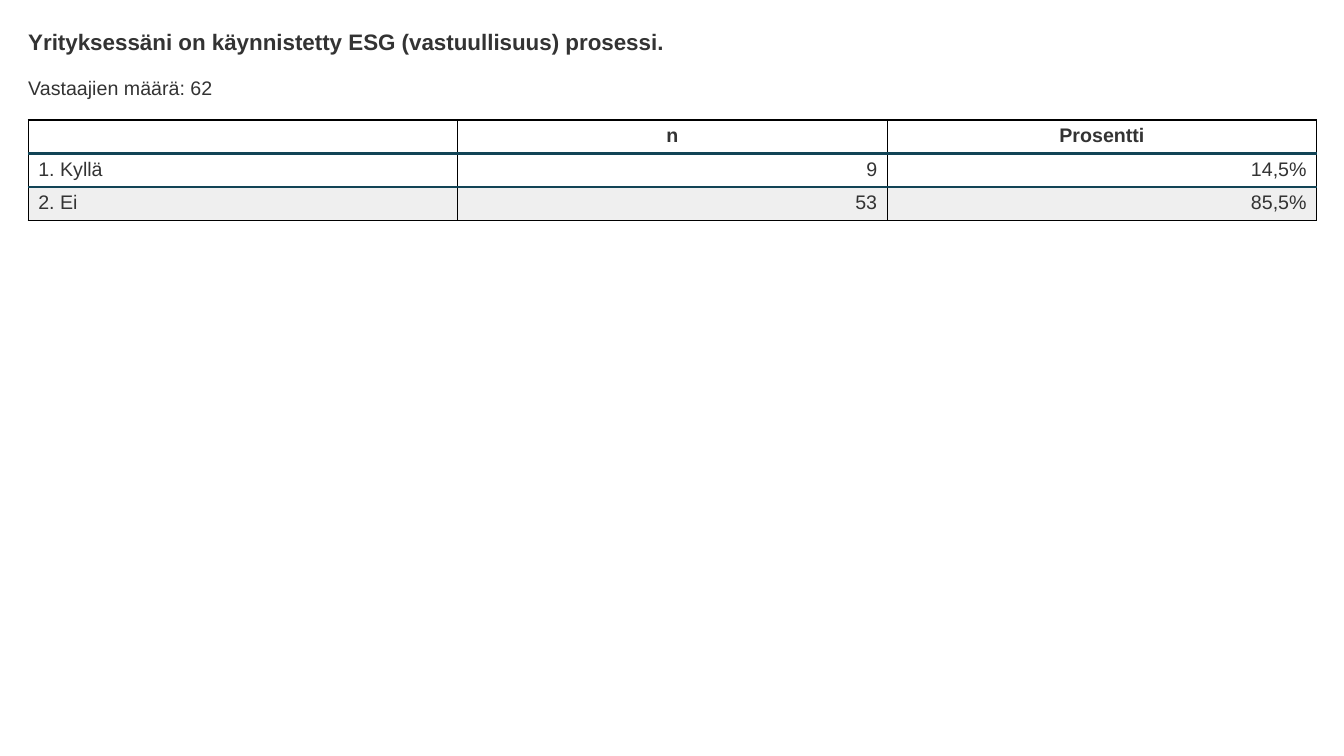
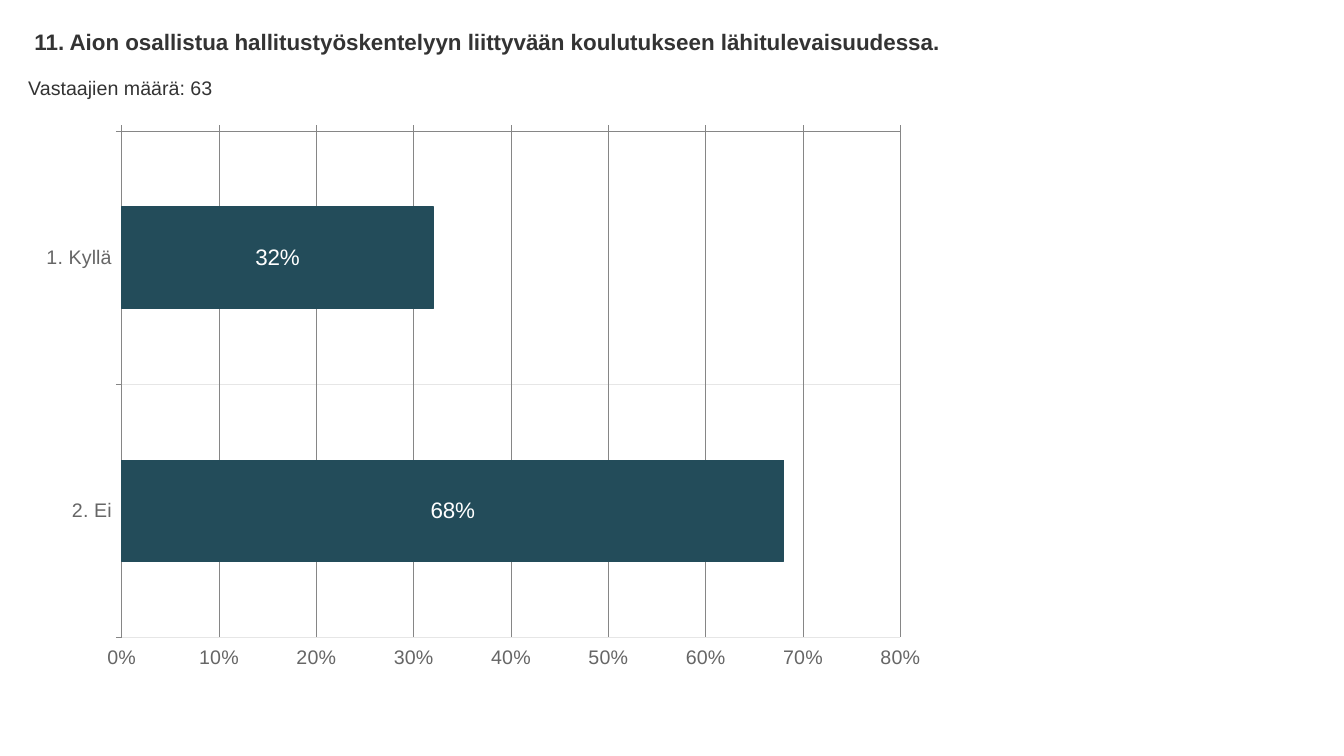
from lxml import etree
from pptx import Presentation
from pptx.chart.data import CategoryChartData
from pptx.dml.color import RGBColor
from pptx.enum.chart import XL_CHART_TYPE, XL_LABEL_POSITION, XL_TICK_LABEL_POSITION, XL_TICK_MARK
from pptx.enum.text import MSO_ANCHOR, MSO_AUTO_SIZE, PP_ALIGN
from pptx.oxml.ns import qn
from pptx.util import Inches, Pt

BAR = XL_CHART_TYPE.BAR_CLUSTERED
MIDDLE = XL_LABEL_POSITION.CENTER
LOW, HIGH = XL_TICK_LABEL_POSITION.LOW, XL_TICK_LABEL_POSITION.HIGH
OUT, NONE = XL_TICK_MARK.OUTSIDE, XL_TICK_MARK.NONE
LEFT, CENTER, RIGHT = PP_ALIGN.LEFT, PP_ALIGN.CENTER, PP_ALIGN.RIGHT

FONT = "Arial"
COLORS = {
    "text": "333333", "axis": "666666", "white": "FFFFFF", "band": "EFEFEF",
    "edge": "000000", "rule": "124456", "bar": "234C5A",
    "line": "868686", "grid": "E6E6E6",
}
MARGIN, WIDTH = 0.28, 12.78
BODY_TOP = 1.19


def color(name):
    return RGBColor.from_string(COLORS[name])


def style(font, size, tone="text", bold=False):
    font.name, font.size, font.bold = FONT, Pt(size), bold
    font.color.rgb = color(tone)


def place(shape, top, height, text, size, bold=False):
    """Set a full-width line of text without insets."""
    shape.left, shape.top = Inches(MARGIN), Inches(top)
    shape.width, shape.height = Inches(WIDTH), Inches(height)
    frame = shape.text_frame
    frame.text = text
    frame.word_wrap = True
    frame.auto_size = MSO_AUTO_SIZE.NONE
    frame.vertical_anchor = MSO_ANCHOR.TOP
    frame.margin_left = frame.margin_right = 0
    frame.margin_top = frame.margin_bottom = 0
    para = frame.paragraphs[0]
    para.alignment = LEFT
    style(para.runs[0].font, size, bold=bold)


def add_page(deck, title, count):
    """Add a slide with its question and number of answers."""
    slide = deck.slides.add_slide(deck.slide_layouts[5])
    place(slide.shapes.title, 0.28, 0.27, title, 16, bold=True)
    box = slide.shapes.add_textbox(0, 0, 0, 0)
    place(box, 0.75, 0.23, f"Vastaajien määrä: {count}", 14)
    return slide


def add_edge(cell, side, tone, width):
    props = cell._tc.get_or_add_tcPr()
    line = etree.SubElement(props, qn(f"a:ln{side}"), w=str(Pt(width)))
    fill = etree.SubElement(line, qn("a:solidFill"))
    etree.SubElement(fill, qn("a:srgbClr"), val=COLORS[tone])


def add_table(slide, rows):
    last = len(rows) - 1
    frame = slide.shapes.add_table(
        len(rows), len(rows[0]), Inches(MARGIN), Inches(BODY_TOP),
        Inches(WIDTH), Inches(1))
    table = frame.table
    for r, row in enumerate(rows):
        for c, text in enumerate(row):
            cell = table.cell(r, c)
            cell.text = text
            para = cell.text_frame.paragraphs[0]
            para.alignment = CENTER if r == 0 else RIGHT if c else LEFT
            style(para.font, 14)
            for run in para.runs:
                style(run.font, 14, bold=r == 0)
            # Borders go before the fill in the cell properties
            inner = ("rule", 2)
            outer = ("edge", 1)
            add_edge(cell, "L", *outer)
            add_edge(cell, "R", *outer)
            add_edge(cell, "T", *(inner if r else outer))
            add_edge(cell, "B", *(inner if r < last else outer))
            cell.fill.solid()
            cell.fill.fore_color.rgb = color("band" if r and r % 2 == 0 else "white")


def set_axis(axis, labels, grid):
    axis.tick_label_position = labels
    axis.major_tick_mark, axis.minor_tick_mark = OUT, NONE
    style(axis.tick_labels.font, 14, "axis")
    axis.format.line.color.rgb = color("line")
    axis.has_major_gridlines = True
    line = axis.major_gridlines.format.line
    line.color.rgb = color(grid)
    line.width = Pt(0.75)


def add_chart(slide, shares):
    data = CategoryChartData(number_format="0%")
    data.categories = list(shares)
    data.add_series("Series 1", list(shares.values()))
    chart = slide.shapes.add_chart(
        BAR, Inches(MARGIN), Inches(BODY_TOP), Inches(9.03), Inches(5.56), data).chart
    chart.has_legend = chart.has_title = False
    style(chart.font, 14, "axis")

    # Axes: first answer on top, scale along the bottom
    set_axis(chart.category_axis, LOW, "grid")
    chart.category_axis.reverse_order = True
    scale = chart.value_axis
    set_axis(scale, HIGH, "line")
    scale.minimum_scale, scale.maximum_scale, scale.major_unit = 0, 0.8, 0.1
    scale.tick_labels.number_format = "0%"
    scale.tick_labels.number_format_is_linked = False

    # Bars and their labels
    plot = chart.plots[0]
    plot.gap_width = 150
    plot.vary_by_categories = False
    look = plot.series[0].format
    look.fill.solid()
    look.fill.fore_color.rgb = color("bar")
    look.line.color.rgb = color("bar")
    look.line.width = Pt(0.75)
    plot.has_data_labels = True
    labels = plot.data_labels
    labels.show_value = True
    labels.position = MIDDLE
    labels.number_format = "0%"
    labels.number_format_is_linked = False
    style(labels.font, 16, "white")


def main():
    deck = Presentation()
    deck.slide_width, deck.slide_height = Inches(13.33), Inches(7.5)

    slide = add_page(deck, "Yrityksessäni on käynnistetty ESG (vastuullisuus) prosessi.", 62)
    add_table(slide, [
        ("", "n", "Prosentti"),
        ("1. Kyllä", "9", "14,5%"),
        ("2. Ei", "53", "85,5%"),
    ])

    slide = add_page(
        deck,
        " 11. Aion osallistua hallitustyöskentelyyn liittyvään koulutukseen lähitulevaisuudessa.",
        63)
    add_chart(slide, {"1. Kyllä": 0.32, "2. Ei": 0.68})

    deck.save("out.pptx")


if __name__ == "__main__":
    main()
